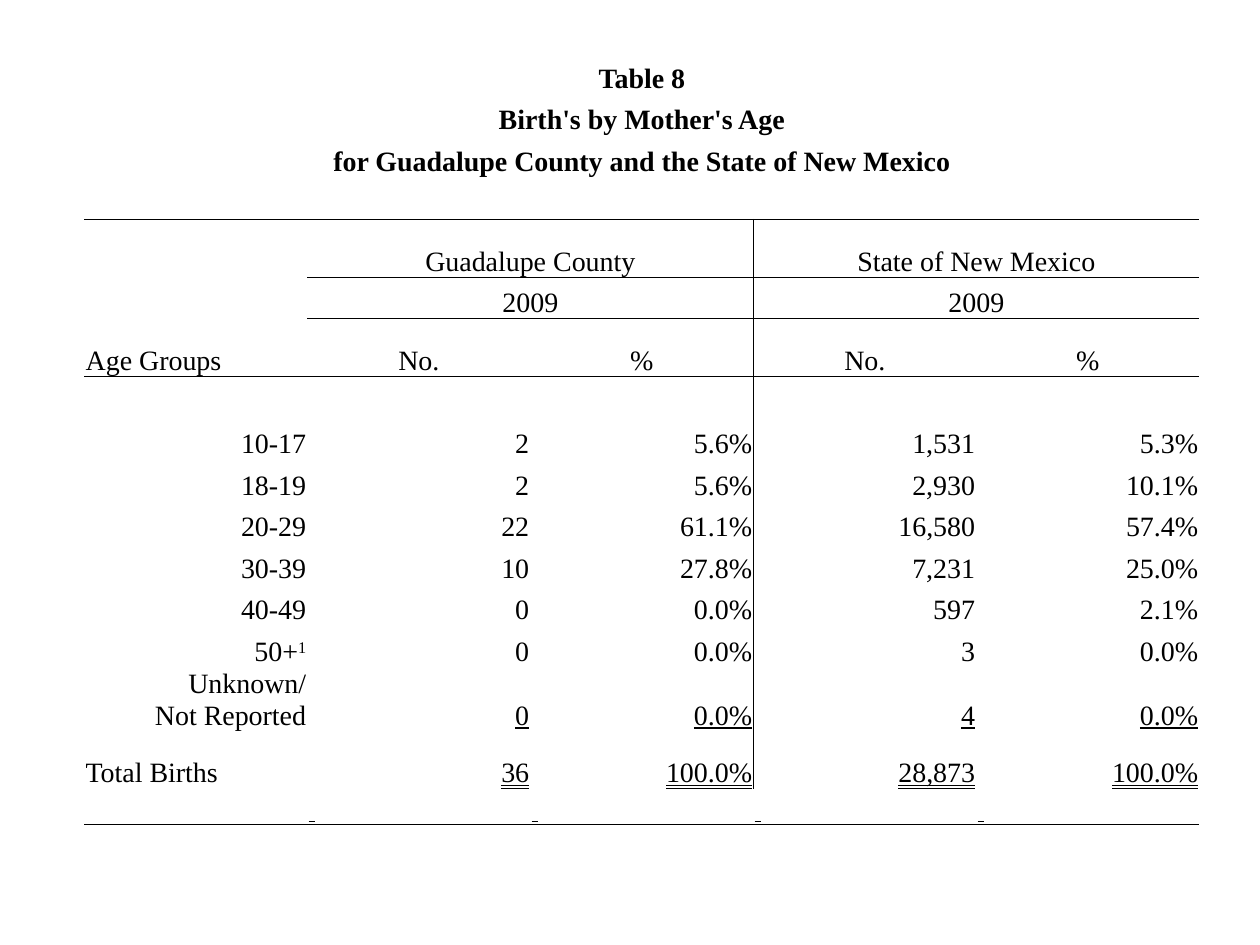
"""Build a slide with a table of births by mother's age group."""
import pptx
import pptx.dml.color
import pptx.enum.text
import pptx.oxml.ns
import pptx.util
from lxml import etree

Inches = pptx.util.Inches
Pt = pptx.util.Pt
qn = pptx.oxml.ns.qn
ALIGN = pptx.enum.text.PP_ALIGN
UNDERLINE = pptx.enum.text.MSO_UNDERLINE

TITLES = ["Table 8", "Birth's by Mother's Age",
          "for Guadalupe County and the State of New Mexico"]
REGIONS = ["Guadalupe County", "State of New Mexico"]
HEADINGS = ["Age Groups", "No.", "%", "No.", "%"]
BIRTHS = [
    ["10-17", "2", "5.6%", "1,531", "5.3%"],
    ["18-19", "2", "5.6%", "2,930", "10.1%"],
    ["20-29", "22", "61.1%", "16,580", "57.4%"],
    ["30-39", "10", "27.8%", "7,231", "25.0%"],
    ["40-49", "0", "0.0%", "597", "2.1%"],
    ["50+^1", "0", "0.0%", "3", "0.0%"],
    ["Unknown/\nNot Reported", "0", "0.0%", "4", "0.0%"],
    ["Total Births", "36", "100.0%", "28,873", "100.0%"],
]
COLS, ROWS = 5, 18
REGION_ROW, YEAR_ROW, HEADING_ROW, FIRST_ROW = 4, 5, 6, 8
UNKNOWN_ROW, TOTAL_ROW, CLOSING_ROW = 14, 15, 16
ROW_H = 0.33
SPECIAL_H = {REGION_ROW: 0.46, HEADING_ROW: 0.46, TOTAL_ROW: 0.46, CLOSING_ROW: 0.23}


def rgb(value):
    return pptx.dml.color.RGBColor.from_string(value)


class Deck:
    def __init__(self, prs):
        self.font, self.size, self.color = "Times New Roman", 16, "000000"
        self.s = prs.slides.add_slide(prs.slide_layouts[6])

    def table(self, left, top, col_w, heights):
        sp = self.s.shapes.add_table(len(heights), COLS, Inches(left), Inches(top),
                                     Inches(col_w * COLS), Inches(sum(heights)))
        tbl = sp.table
        tbl.first_row = tbl.horz_banding = False
        for col in tbl.columns:
            col.width = Inches(col_w)
        for row, height in zip(tbl.rows, heights):
            row.height = Inches(height)
        return tbl

    def cell(self, cell, edges):
        cell.margin_left = cell.margin_right = cell.margin_top = Inches(0.01)
        cell.margin_bottom = 0
        cell.vertical_anchor = pptx.enum.text.MSO_ANCHOR.BOTTOM
        tcPr = cell._tc.get_or_add_tcPr()
        for edge in "LRTB":
            ln = etree.SubElement(tcPr, qn("a:ln" + edge), w=str(Pt(0.5)))
            if edge in edges:
                fill = etree.SubElement(ln, qn("a:solidFill"))
                etree.SubElement(fill, qn("a:srgbClr"), val=self.color)
            else:
                etree.SubElement(ln, qn("a:noFill"))
        cell.fill.background()
        if not cell.text_frame.text:
            p = cell.text_frame.paragraphs[0]
            etree.SubElement(p._p, qn("a:endParaRPr"), sz=str(self.size * 100))

    def text(self, cell, text, align, bold=False, underline=None):
        tf = cell.text_frame
        for i, line in enumerate(text.split("\n")):
            p = tf.add_paragraph() if i else tf.paragraphs[0]
            p.alignment = align
            for j, part in enumerate(line.split("^")):
                r = p.add_run()
                r.text = part
                r.font.name, r.font.size = self.font, Pt(self.size)
                r.font.color.rgb = rgb(self.color)
                r.font.bold, r.font.underline = bold, underline
                if j:
                    r.font._element.set("baseline", "30000")


def edges_of(row, col):
    """Return the sides of a cell that carry a rule."""
    def ruled_below(r):
        full = r in (REGION_ROW - 1, HEADING_ROW, CLOSING_ROW)
        return full or (r in (REGION_ROW, YEAR_ROW) and col > 0)

    edges = ("B" if ruled_below(row) else "") + ("T" if ruled_below(row - 1) else "")
    if REGION_ROW <= row <= TOTAL_ROW:
        edges += {2: "R", 3: "L"}.get(col, "")
    return edges


def main():
    prs = pptx.Presentation()
    prs.slide_width, prs.slide_height = Inches(10), Inches(7.5)
    deck = Deck(prs)
    tbl = deck.table(0.67, 0.42, 1.77, [SPECIAL_H.get(i, ROW_H) for i in range(ROWS)])

    for row, title in enumerate(TITLES):
        tbl.cell(row, 0).merge(tbl.cell(row, COLS - 1))
        deck.text(tbl.cell(row, 0), title, ALIGN.CENTER, bold=True)
    for col, region in zip((1, 3), REGIONS):
        for row, label in ((REGION_ROW, region), (YEAR_ROW, "2009")):
            tbl.cell(row, col).merge(tbl.cell(row, col + 1))
            deck.text(tbl.cell(row, col), label, ALIGN.CENTER)
    for col, heading in enumerate(HEADINGS):
        deck.text(tbl.cell(HEADING_ROW, col), heading, ALIGN.CENTER if col else ALIGN.LEFT)

    rules = {UNKNOWN_ROW: UNDERLINE.SINGLE_LINE, TOTAL_ROW: UNDERLINE.DOUBLE_LINE}
    for row, values in enumerate(BIRTHS, FIRST_ROW):
        for col, value in enumerate(values):
            is_total_label = row == TOTAL_ROW and col == 0
            deck.text(tbl.cell(row, col), value,
                      ALIGN.LEFT if is_total_label else ALIGN.RIGHT,
                      underline=rules.get(row) if col else None)
    for col in range(1, COLS):
        deck.text(tbl.cell(CLOSING_ROW, col), " ", ALIGN.LEFT,
                  underline=UNDERLINE.SINGLE_LINE)

    for row in range(ROWS):
        for col in range(COLS):
            deck.cell(tbl.cell(row, col), edges_of(row, col))
    prs.save("out.pptx")


if __name__ == "__main__":
    main()
